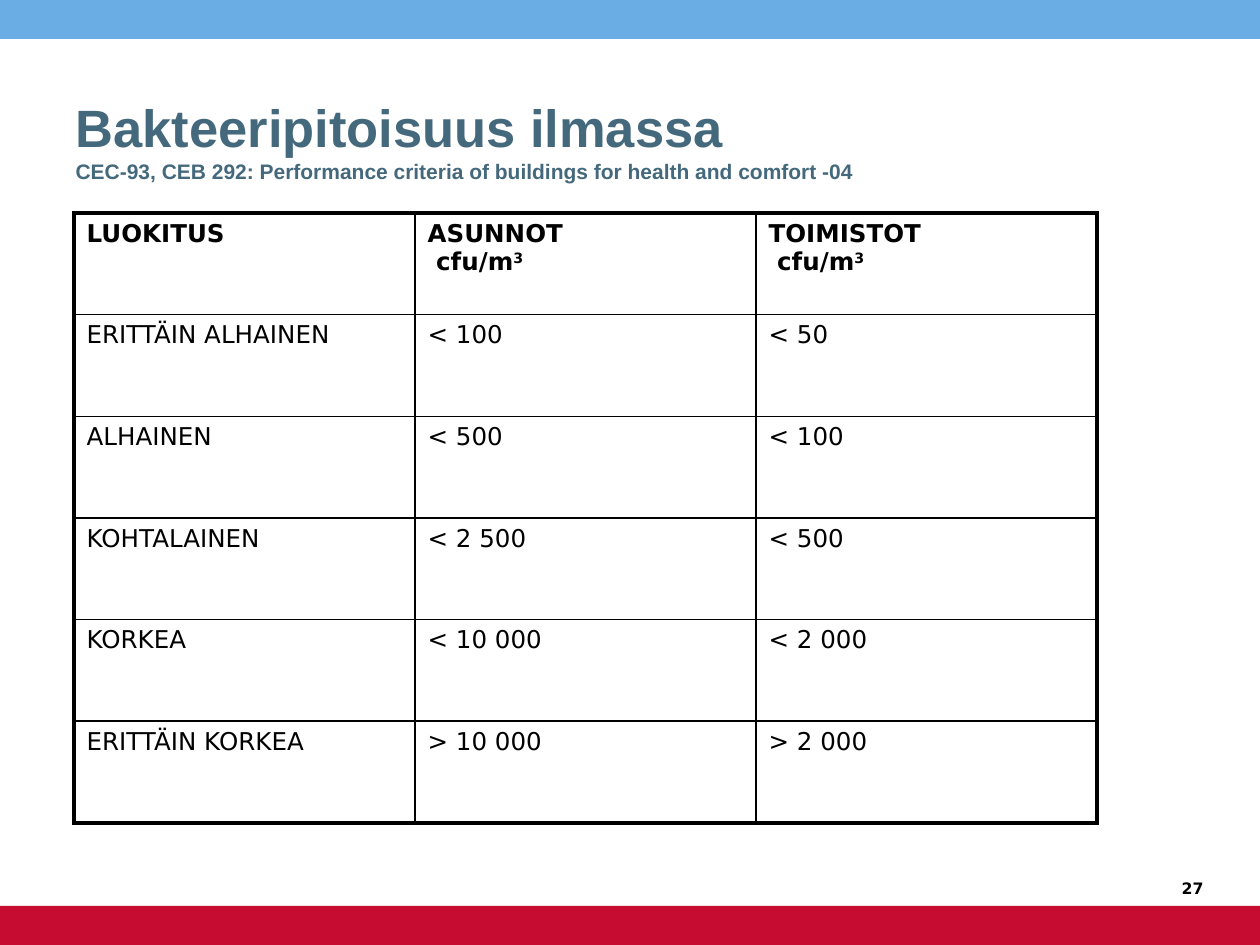
import copy

import pptx
import pptx.dml.color
import pptx.enum.shapes
import pptx.enum.text
import pptx.oxml
import pptx.oxml.ns
import pptx.util

RGB = pptx.dml.color.RGBColor
ANCHOR = pptx.enum.text.MSO_ANCHOR
ALIGN = pptx.enum.text.PP_ALIGN

SKY = RGB(0x6A, 0xAD, 0xE4)
RED = RGB(0xC6, 0x0C, 0x30)
SLATE = RGB(0x44, 0x69, 0x7D)
BLACK = RGB(0, 0, 0)

HEAD, BODY = "Arial", "DejaVu Sans"
THIN, THICK = 1, 2.25
UNIT = "cfu/m"

LEVELS = [
    ("ERITTÄIN ALHAINEN", "< 100", "< 50"),
    ("ALHAINEN", "< 500", "< 100"),
    ("KOHTALAINEN", "< 2 500", "< 500"),
    ("KORKEA", "< 10 000", "< 2 000"),
    ("ERITTÄIN KORKEA", "> 10 000", "> 2 000"),
]


def px(num):
    return pptx.util.Emu(round(num * 914400 / 126))


def place(shape, left, top, width, height):
    shape.left, shape.top = px(left), px(top)
    shape.width, shape.height = px(width), px(height)


def add_run(para, text, size, face, color, bold=False):
    run = para.add_run()
    run.text = text
    font = run.font
    font.size, font.name, font.bold = pptx.util.Pt(size), face, bold
    font.color.rgb = color
    return run


def add_break(para, run):
    """Break the line at the text size of the run before it."""
    para.add_line_break()
    mark = para._p.findall(pptx.oxml.ns.qn("a:br"))[-1]
    mark.append(copy.deepcopy(run._r.rPr))


def add_band(slide, top, height, color):
    kind = pptx.enum.shapes.MSO_SHAPE.RECTANGLE
    band = slide.shapes.add_shape(kind, 0, px(top), px(1260), px(height))
    band.shadow.inherit = False
    band.fill.solid()
    band.fill.fore_color.rgb = color
    band.line.fill.background()


def add_title(slide):
    title = slide.shapes.title
    place(title, 63, 33, 935, 157)
    frame = title.text_frame
    frame.word_wrap = True
    frame.auto_size = pptx.enum.text.MSO_AUTO_SIZE.NONE
    frame.vertical_anchor = ANCHOR.BOTTOM
    para = frame.paragraphs[0]
    para.alignment = ALIGN.LEFT
    run = add_run(para, "Bakteeripitoisuus ilmassa", 30, HEAD, SLATE, True)
    add_break(para, run)
    add_run(para, "CEC-93, CEB 292: Performance criteria of buildings "
            "for health and comfort -04", 12, HEAD, SLATE, True)


def add_number(slide):
    box = slide.shapes.add_textbox(px(1147), px(854), px(69), px(50))
    frame = box.text_frame
    frame.word_wrap = True
    frame.vertical_anchor = ANCHOR.BOTTOM
    para = frame.paragraphs[0]
    para.alignment = ALIGN.RIGHT
    add_run(para, "27", 9, BODY, BLACK, True)


def set_edge(cell, side, width):
    space = pptx.oxml.ns.nsdecls("a")
    edge = pptx.oxml.parse_xml(
        f'<a:ln{side} {space} w="{pptx.util.Pt(width)}">'
        f'<a:solidFill><a:srgbClr val="{BLACK}"/></a:solidFill></a:ln{side}>')
    return cell._tc.get_or_add_tcPr().append(edge)


def fill_cell(cell, text, bold, unit):
    para = cell.text_frame.paragraphs[0]
    para.space_after = pptx.util.Pt(2.8)
    run = add_run(para, text, 14, BODY, BLACK, bold)
    if unit:
        add_break(para, run)
        add_run(para, " " + UNIT, 14, BODY, BLACK, bold)
        power = add_run(para, "3", 14, BODY, BLACK, bold)
        power._r.get_or_add_rPr().set("baseline", "30000")


def add_grid(slide):
    rows = [("LUOKITUS", "ASUNNOT", "TOIMISTOT")] + LEVELS
    high, wide = len(rows), len(rows[0])
    shape = slide.shapes.add_table(
        high, wide, px(74), px(213), px(1023), px(610))
    table = shape.table
    table.horz_banding = False
    for r, row in enumerate(rows):
        for c, text in enumerate(row):
            cell = table.cell(r, c)
            fill_cell(cell, text, r == 0, r == 0 and c > 0)
            # Thick lines run round the outside; edges precede the fill
            outer = {"L": c == 0, "R": c == wide - 1,
                     "T": r == 0, "B": r == high - 1}
            for side, thick in outer.items():
                set_edge(cell, side, THICK if thick else THIN)
            cell.fill.background()


def main():
    deck = pptx.Presentation()
    deck.slide_width, deck.slide_height = px(1260), px(945)
    slide = deck.slides.add_slide(deck.slide_layouts[5])

    # Bands at top and foot
    add_band(slide, 0, 39, SKY)
    add_band(slide, 906, 39, RED)

    # Content
    add_number(slide)
    add_title(slide)
    add_grid(slide)
    deck.save("out.pptx")


if __name__ == "__main__":
    main()
